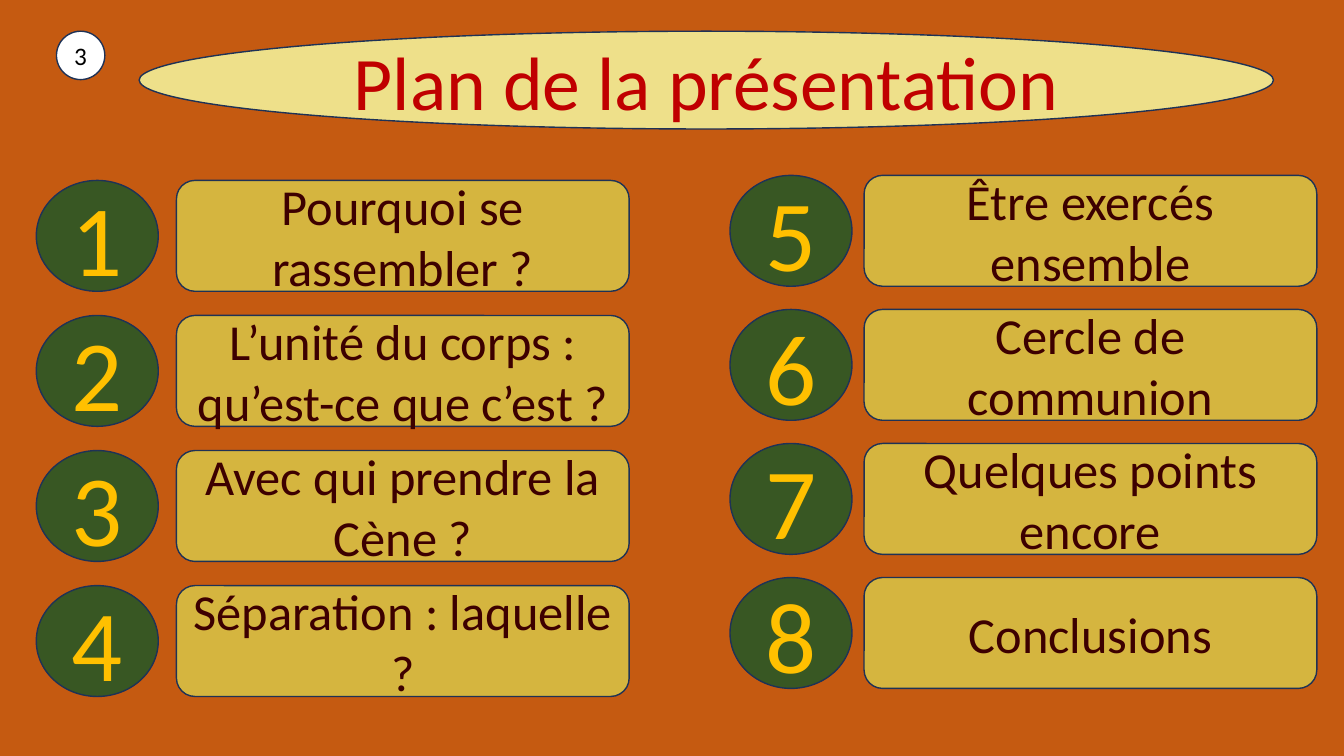
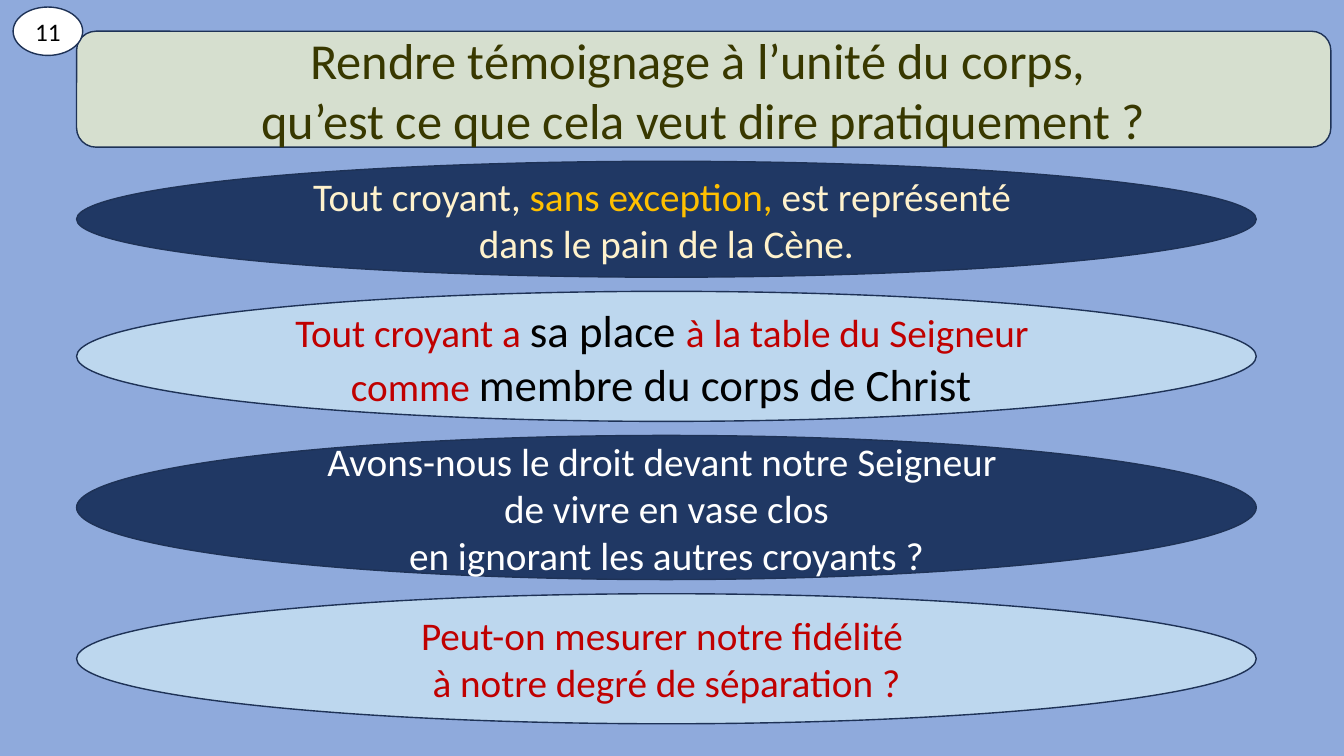
import pptx
import pptx.dml.color
import pptx.enum.shapes
import pptx.enum.text
import pptx.util

Inches = pptx.util.Inches
RGBColor = pptx.dml.color.RGBColor
Shape = pptx.enum.shapes.MSO_SHAPE

# Shared style
FONT = "Calibri"
OUTLINE = RGBColor(0x1E, 0x32, 0x56)
WHITE = RGBColor(0xFF, 0xFF, 0xFF)
BLACK = RGBColor(0x00, 0x00, 0x00)
RED = RGBColor(0xC0, 0x00, 0x00)
GOLD = RGBColor(0xFF, 0xC0, 0x00)

# Plan slide
ORANGE = RGBColor(0xC5, 0x5A, 0x11)
STRAW = RGBColor(0xEE, 0xE0, 0x8A)
GREEN = RGBColor(0x38, 0x57, 0x23)
MUSTARD = RGBColor(0xD5, 0xB5, 0x3F)
MAROON = RGBColor(0x3D, 0x00, 0x00)

# Statement slide
SKY = RGBColor(0x8F, 0xAA, 0xDC)
SAGE = RGBColor(0xD6, 0xDF, 0xCF)
OLIVE = RGBColor(0x38, 0x38, 0x00)
NAVY = RGBColor(0x20, 0x38, 0x64)
PALE_BLUE = RGBColor(0xBD, 0xD7, 0xEE)
CREAM = RGBColor(0xFF, 0xF2, 0xCC)

TITLE_ONLY_LAYOUT = 5
BAND_GAP = 0.14

PLAN_LEFT = [
    "Pourquoi se rassembler ?",
    "L’unité du corps : qu’est-ce que c’est ?",
    "Avec qui prendre la Cène ?",
    "Séparation : laquelle ?",
]
PLAN_RIGHT = [
    "Être exercés ensemble",
    "Cercle de communion",
    "Quelques points encore",
    "Conclusions",
]

# Each band: height, fill, lines of (text, size, colour) runs
BANDS = [
    (1.15, NAVY, [
        [("Tout croyant, ", 28, CREAM), ("sans exception,", 28, GOLD),
         (" est représenté ", 28, CREAM)],
        [("dans le pain de la Cène.", 28, CREAM)],
    ]),
    (1.29, PALE_BLUE, [
        [("Tout croyant a ", 28, RED), ("sa place ", 32, BLACK),
         ("à la table du Seigneur ", 28, RED)],
        [("comme ", 28, RED), ("membre du corps de Christ ", 32, BLACK)],
    ]),
    (1.43, NAVY, [
        [("Avons-nous le droit devant notre Seigneur ", 28, WHITE)],
        [("de vivre en vase clos", 28, WHITE)],
        [("en ignorant les autres croyants ?", 28, WHITE)],
    ]),
    (1.29, PALE_BLUE, [
        [("Peut-on mesurer notre fidélité ", 28, RED)],
        [("à notre degré de séparation ?", 28, RED)],
    ]),
]


def write_lines(text_frame, lines):
    """Write centred paragraphs, each a list of (text, size, colour) runs."""
    text_frame.word_wrap = True
    text_frame.vertical_anchor = pptx.enum.text.MSO_ANCHOR.MIDDLE
    for index, runs in enumerate(lines):
        paragraph = text_frame.paragraphs[0] if index == 0 else text_frame.add_paragraph()
        paragraph.alignment = pptx.enum.text.PP_ALIGN.CENTER
        for text, size, color in runs:
            run = paragraph.add_run()
            run.text = text
            run.font.name = FONT
            run.font.size = pptx.util.Pt(size)
            run.font.color.rgb = color


def add_panel(slide, kind, box, fill, lines=()):
    """Add an outlined shape in box (left, top, width, height)."""
    shape = slide.shapes.add_shape(kind, *map(Inches, box))
    shape.shadow.inherit = False
    shape.fill.solid()
    shape.fill.fore_color.rgb = fill
    shape.line.color.rgb = OUTLINE
    shape.line.width = pptx.util.Pt(1)
    write_lines(shape.text_frame, lines)
    return shape


def add_slide(presentation, background):
    slide = presentation.slides.add_slide(presentation.slide_layouts[TITLE_ONLY_LAYOUT])
    slide.background.fill.solid()
    slide.background.fill.fore_color.rgb = background
    return slide


def add_title(slide, kind, box, fill, lines):
    """Set the title placeholder over a panel of the given kind."""
    panel = add_panel(slide, kind, box, fill)
    title = slide.shapes.title
    panel._element.addnext(title._element)
    left, top, width, height = box
    overhang = 0.1
    title.left, title.width = Inches(left), Inches(width)
    title.top, title.height = Inches(top - overhang), Inches(height + 2 * overhang)
    frame = title.text_frame
    frame.auto_size = pptx.enum.text.MSO_AUTO_SIZE.NONE
    frame.margin_top = frame.margin_bottom = 0
    write_lines(frame, lines)


def add_page_badge(slide, box, number):
    add_panel(slide, Shape.OVAL, box, WHITE, [[(number, 18, BLACK)]])


def add_plan_column(slide, left, top, pitch, label_offset, first_number, labels):
    """Stack numbered topics, each a disc followed by a label."""
    for row, label in enumerate(labels):
        row_top = top + row * pitch
        add_panel(slide, Shape.OVAL, (left, row_top, 1.21, 1.1), GREEN,
                  [[(str(first_number + row), 72, GOLD)]])
        add_panel(slide, Shape.ROUNDED_RECTANGLE,
                  (left + label_offset, row_top, 4.49, 1.1), MUSTARD,
                  [[(label, 36, MAROON)]])


def add_bands(slide, left, top, width):
    """Stack the statement ellipses with equal gaps."""
    for height, fill, lines in BANDS:
        add_panel(slide, Shape.OVAL, (left, top, width, height), fill, lines)
        top += height + BAND_GAP


def build_plan_slide(presentation):
    slide = add_slide(presentation, ORANGE)
    add_title(slide, Shape.OVAL, (1.38, 0.31, 11.25, 0.97), STRAW,
              [[("Plan de la présentation", 54, RED)]])
    add_page_badge(slide, (0.56, 0.31, 0.48, 0.48), "3")
    add_plan_column(slide, 0.36, 1.79, 1.34, 1.39, 1, PLAN_LEFT)
    add_plan_column(slide, 7.24, 1.74, 1.33, 1.33, 5, PLAN_RIGHT)


def build_statement_slide(presentation):
    slide = add_slide(presentation, SKY)
    add_title(slide, Shape.ROUNDED_RECTANGLE, (0.76, 0.31, 12.44, 1.15), SAGE, [
        [("Rendre témoignage à l’unité du corps, ", 36, OLIVE)],
        [("qu’est ce que cela veut dire pratiquement ?", 36, OLIVE)],
    ])
    add_page_badge(slide, (0.13, 0.07, 0.69, 0.48), "11")
    add_bands(slide, 0.76, 1.6, 11.7)


def main():
    presentation = pptx.Presentation()
    presentation.slide_width = Inches(13.33)
    presentation.slide_height = Inches(7.5)
    build_plan_slide(presentation)
    build_statement_slide(presentation)
    presentation.save("out.pptx")


if __name__ == "__main__":
    main()
